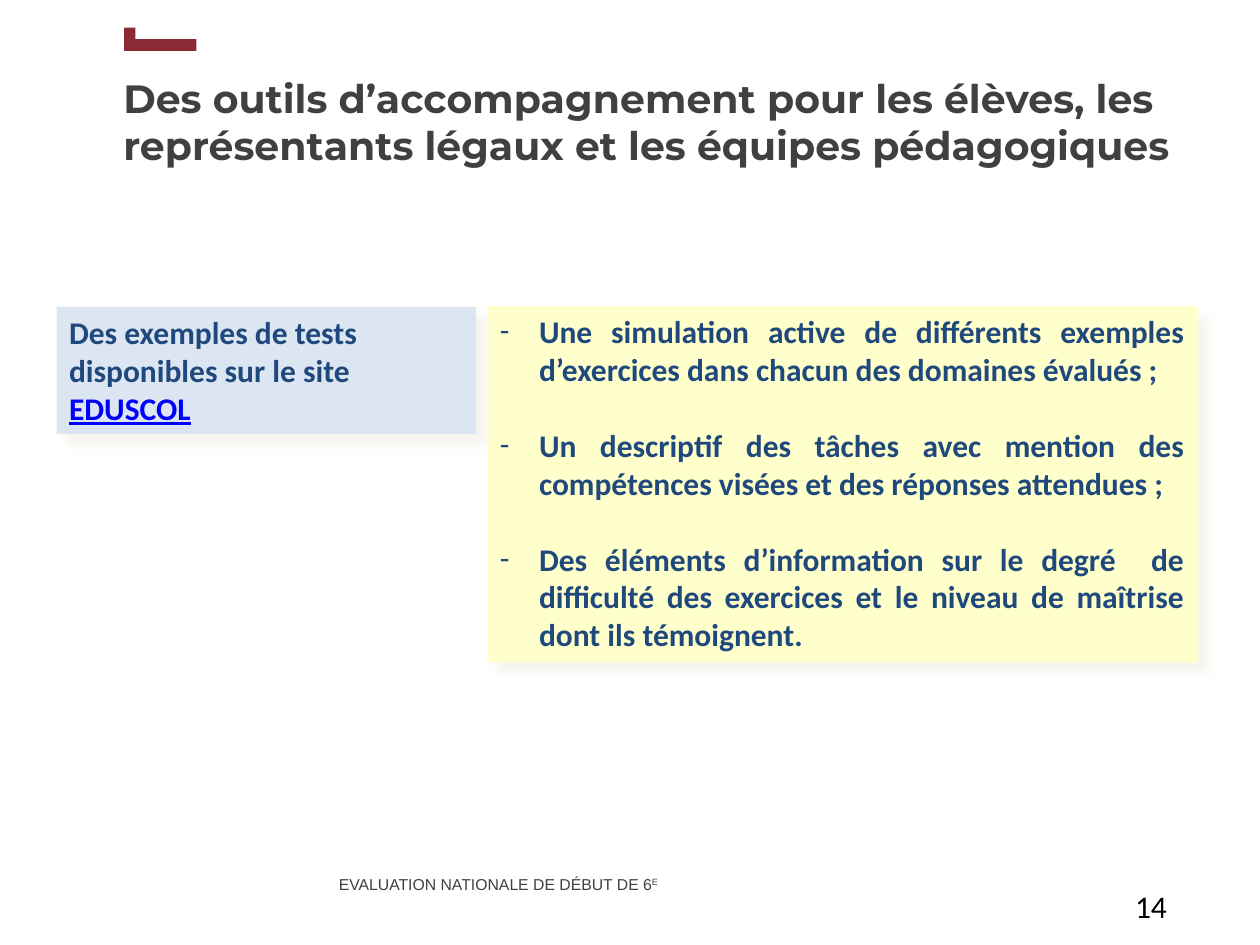
from dataclasses import dataclass, field

import pptx
import pptx.dml.color
import pptx.enum.shapes
import pptx.enum.text
import pptx.oxml
import pptx.oxml.ns
import pptx.util
from pptx.dml.color import RGBColor

# Grid: 100 columns by 75 rows cover the slide
COLUMNS, ROWS = 100, 75
SLIDE_WIDTH = pptx.util.Inches(10)
SLIDE_HEIGHT = pptx.util.Inches(7.5)

BURGUNDY = RGBColor(0x8B, 0x29, 0x34)
DARK_GREY = RGBColor(0x40, 0x40, 0x40)
BLACK = RGBColor(0x00, 0x00, 0x00)
NAVY = RGBColor(0x1F, 0x49, 0x7D)
LINK_BLUE = RGBColor(0x00, 0x00, 0xFF)
PALE_YELLOW = RGBColor(0xFF, 0xFF, 0xCC)
PALE_BLUE = RGBColor(0xDC, 0xE6, 0xF2)
SHADOW_COLOUR = RGBColor(0xEE, 0xEC, 0xE1)

TOP = pptx.enum.text.MSO_ANCHOR.TOP
MIDDLE = pptx.enum.text.MSO_ANCHOR.MIDDLE
LEFT = pptx.enum.text.PP_ALIGN.LEFT
JUSTIFY = pptx.enum.text.PP_ALIGN.JUSTIFY
HANGING = pptx.util.Inches(0.31)
BODY_LINE = pptx.util.Pt(21.7)


@dataclass(frozen=True)
class Area:
    """A rectangle in grid columns and rows."""
    left: float
    top: float
    width: float
    height: float

    def lengths(self) -> tuple:
        column, row = SLIDE_WIDTH / COLUMNS, SLIDE_HEIGHT / ROWS
        return (round(self.left * column), round(self.top * row),
                round(self.width * column), round(self.height * row))


@dataclass(frozen=True)
class Span:
    text: str
    font: dict
    colour: RGBColor
    superscript: bool = False


@dataclass(frozen=True)
class Para:
    spans: list
    format: dict = field(default_factory=dict)
    bullet: bool = False


TITLE_FONT = {"name": "Montserrat", "size": pptx.util.Pt(22.5), "bold": True}
FOOTER_FONT = {"name": "Arial", "size": pptx.util.Pt(9)}
NUMBER_FONT = {"name": "Calibri", "size": pptx.util.Pt(18)}
BODY_FONT = NUMBER_FONT | {"bold": True}
LINK_FONT = BODY_FONT | {"underline": True}

RESOURCES = [
    "Une simulation active de différents exemples d’exercices dans chacun des "
    "domaines évalués ;",
    "Un descriptif des tâches avec mention des compétences visées et des "
    "réponses attendues ;",
    "Des éléments d’information sur le degré  de difficulté des exercices et le "
    "niveau de maîtrise dont ils témoignent.",
]


def set_values(target, values: dict) -> None:
    for name, value in values.items():
        setattr(target, name, value)


def add_dash(paragraph) -> None:
    """Hanging indent with a dash as bullet."""
    properties = paragraph._p.get_or_add_pPr()
    properties.set("marL", str(HANGING))
    properties.set("indent", str(-HANGING))
    for tag, values in (("a:buFont", {"typeface": "Calibri"}),
                        ("a:buChar", {"char": "-"})):
        properties.append(
            properties.makeelement(pptx.oxml.ns.qn(tag), values))


def write(box, paras: list[Para], anchor=TOP, **margins: float) -> None:
    frame = box.text_frame
    set_values(frame, {"word_wrap": True, "vertical_anchor": anchor})
    for name, inches in margins.items():
        setattr(frame, name, pptx.util.Inches(inches))
    for index, para in enumerate(paras):
        paragraph = frame.add_paragraph() if index else frame.paragraphs[0]
        if para.bullet:
            add_dash(paragraph)
        set_values(paragraph, {"alignment": LEFT} | para.format)
        for span in para.spans:
            run = paragraph.add_run()
            run.text = span.text
            set_values(run.font, span.font)
            run.font.color.rgb = span.colour
            if span.superscript:
                run._r.get_or_add_rPr().set("baseline", "30000")


def add_text(page, area: Area, paras: list[Para], anchor=TOP, **margins: float) -> None:
    write(page.shapes.add_textbox(*area.lengths()), paras, anchor, **margins)


def add_rectangle(shapes, area: Area, fill: RGBColor):
    box = shapes.add_shape(pptx.enum.shapes.MSO_SHAPE.RECTANGLE, *area.lengths())
    box.shadow.inherit = False
    box.fill.solid()
    box.fill.fore_color.rgb = fill
    box.line.fill.background()
    return box


def add_shadow(box) -> None:
    """Soft shadow towards the lower right, in the empty effect list."""
    effects = box._element.spPr.find(pptx.oxml.ns.qn("a:effectLst"))
    effects.append(pptx.oxml.parse_xml(
        f'<a:outerShdw {pptx.oxml.ns.nsdecls("a")} blurRad="{pptx.util.Pt(5)}" '
        f'dist="{pptx.util.Pt(8.5)}" dir="2700000" algn="tl" rotWithShape="0">'
        f'<a:srgbClr val="{SHADOW_COLOUR}"><a:alpha val="50000"/></a:srgbClr>'
        '</a:outerShdw>'))


def add_panel(page, area: Area, fill: RGBColor, paras: list[Para]) -> None:
    panel = add_rectangle(page.shapes, area, fill)
    add_shadow(panel)
    write(panel, paras)


def main() -> None:
    deck = pptx.Presentation()
    set_values(deck, {"slide_width": SLIDE_WIDTH, "slide_height": SLIDE_HEIGHT})
    page = deck.slides.add_slide(deck.slide_layouts[6])

    # Footer, title and page number
    add_text(page, Area(25.9, 67.2, 38.8, 7.4), [Para(
        [Span("EVALUATION NATIONALE DE DÉBUT DE 6", FOOTER_FONT, DARK_GREY),
         Span("E", FOOTER_FONT, DARK_GREY, superscript=True)],
        {"line_spacing": pptx.util.Pt(13.2)})], MIDDLE, margin_bottom=0.23)
    add_text(page, Area(8.8, 2, 86.2, 14.1), [Para([Span(
        "Des outils d’accompagnement pour les élèves, les représentants légaux "
        "et les équipes pédagogiques", TITLE_FONT, DARK_GREY)])],
        MIDDLE, margin_top=0.16)
    add_text(page, Area(89.1, 69.9, 4.9, 4),
             [Para([Span("14", NUMBER_FONT, BLACK)])])

    # Corner mark above the title
    corner = page.shapes.add_group_shape()
    for bar in (Area(9.85, 2.2, 0.9, 1.85), Area(10.3, 3.1, 5.3, 0.95)):
        add_rectangle(corner.shapes, bar, BURGUNDY)

    # What the site offers
    add_panel(page, Area(38.7, 24.3, 56.3, 28.3), PALE_YELLOW, [
        Para([Span(text, BODY_FONT, NAVY)],
             {"alignment": JUSTIFY, "space_before": BODY_LINE if index else 0},
             bullet=True)
        for index, text in enumerate(RESOURCES)])

    # Where to find the sample tests
    add_panel(page, Area(4.5, 24.35, 33.3, 10.1), PALE_BLUE, [Para(
        [Span("Des exemples de tests disponibles sur le site ", BODY_FONT, NAVY),
         Span("EDUSCOL", LINK_FONT, LINK_BLUE)])])

    deck.save("out.pptx")


if __name__ == "__main__":
    main()
